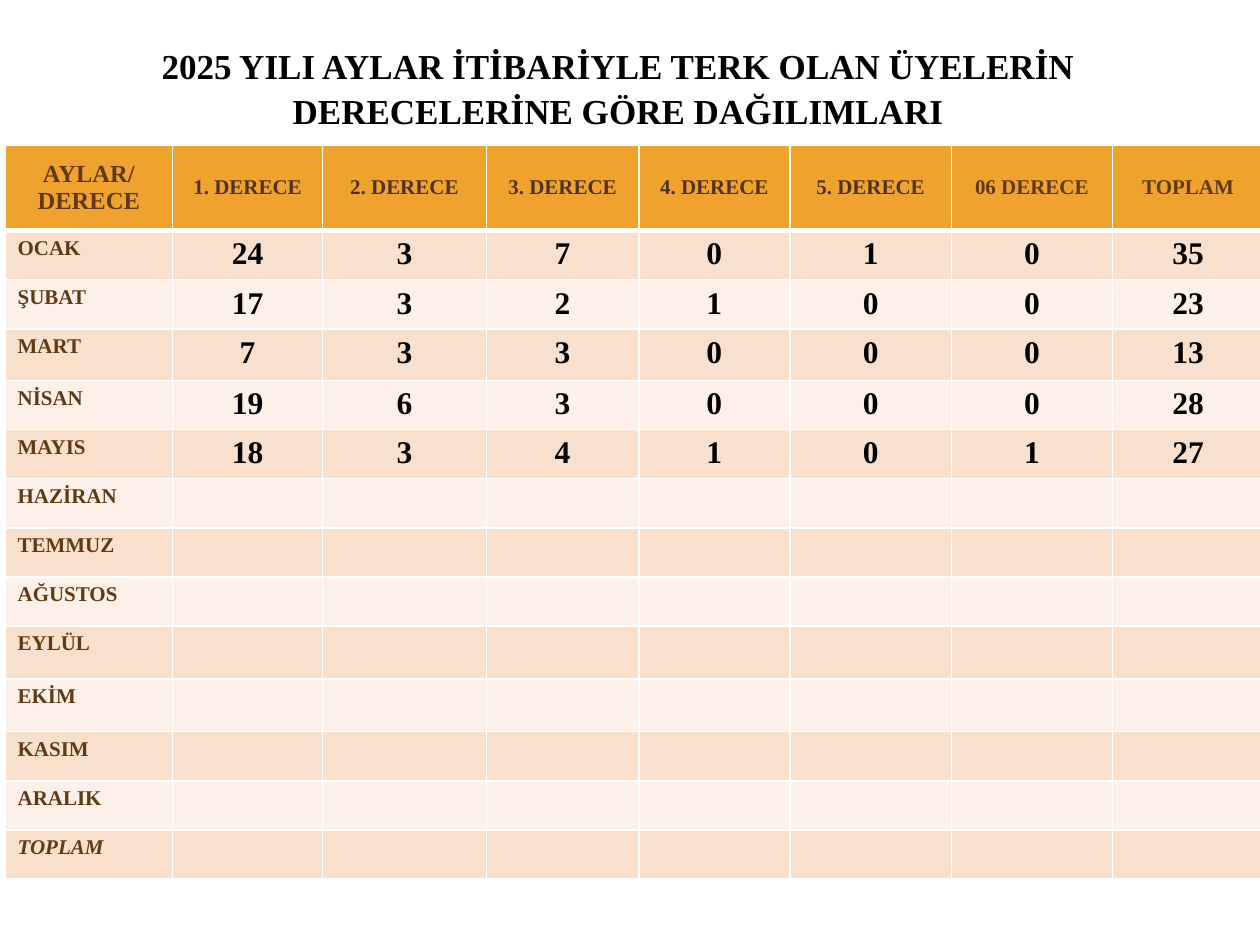
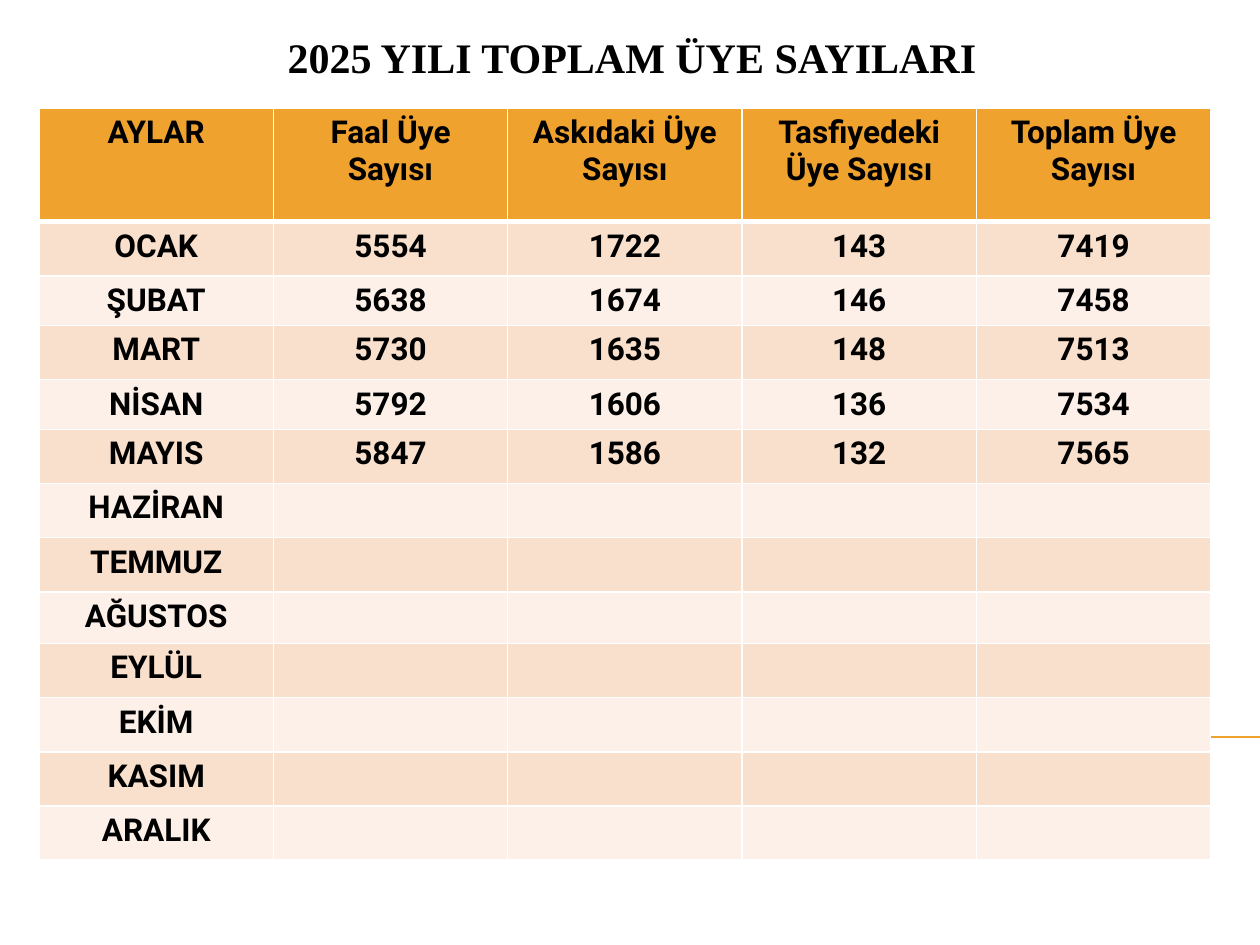
"""Build two slides of 2025 membership tables by month."""
from lxml.etree import SubElement
from pptx import Presentation
from pptx.dml.color import RGBColor
from pptx.enum.shapes import MSO_CONNECTOR
from pptx.enum.text import MSO_ANCHOR as ANCHOR, MSO_AUTO_SIZE, PP_ALIGN as ALIGN
from pptx.oxml.ns import qn
from pptx.util import Inches, Pt

ORANGE = RGBColor(0xF0, 0xA2, 0x2E)
PEACH = RGBColor(0xF9, 0xE0, 0xCD)
CREAM = RGBColor(0xFC, 0xF0, 0xE8)
BROWN = RGBColor(0x60, 0x3A, 0x14)
DARK_BROWN = RGBColor(0x52, 0x32, 0x27)
BLACK = RGBColor(0, 0, 0)
SERIF, SANS = "Times New Roman", "Roboto"

MONTHS = ["OCAK", "ŞUBAT", "MART", "NİSAN", "MAYIS", "HAZİRAN", "TEMMUZ",
          "AĞUSTOS", "EYLÜL", "EKİM", "KASIM", "ARALIK"]
LEAVERS = [[24, 3, 7, 0, 1, 0, 35], [17, 3, 2, 1, 0, 0, 23], [7, 3, 3, 0, 0, 0, 13],
           [19, 6, 3, 0, 0, 0, 28], [18, 3, 4, 1, 0, 1, 27]]
MEMBERS = [[5554, 1722, 143, 7419], [5638, 1674, 146, 7458], [5730, 1635, 148, 7513],
           [5792, 1606, 136, 7534], [5847, 1586, 132, 7565]]

PAGES = [
    {"title": "2025 YILI AYLAR İTİBARİYLE TERK OLAN ÜYELERİN DERECELERİNE GÖRE DAĞILIMLARI",
     "title_box": (0.28, 0.29, 9.25, 0.87), "title_size": 20,
     "title_anchor": ANCHOR.TOP, "title_spacing": 1.05,
     "headers": ["AYLAR/ DERECE", *[f"{degree}. DERECE" for degree in range(1, 6)],
                 "06 DERECE", "TOPLAM"],
     "labels": MONTHS + ["TOPLAM"], "counts": LEAVERS, "corner": (0.04, 1.15),
     "widths": [1.33, 1.19, 1.3, 1.21, 1.2, 1.28, 1.28, 1.2],
     "heights": [0.68, 0.39, 0.39, 0.41, *[0.39] * 5, 0.42, 0.42, *[0.39] * 3],
     "font": SERIF, "header_anchor": ANCHOR.MIDDLE, "header_size": 12,
     "header_color": DARK_BROWN, "label_size": 12, "label_color": BROWN,
     "label_align": ALIGN.LEFT},
    {"title": "2025 YILI TOPLAM ÜYE SAYILARI",
     "title_box": (0.39, 0.23, 9.25, 0.47), "title_size": 24,
     "title_anchor": ANCHOR.BOTTOM, "title_spacing": 1.0,
     "headers": ["AYLAR", "Faal Üye Sayısı", "Askıdaki Üye Sayısı",
                 "Tasfiyedeki Üye Sayısı", "Toplam Üye Sayısı"],
     "labels": MONTHS, "counts": MEMBERS, "corner": (0.31, 0.86),
     "widths": [1.86] * 5,
     "heights": [0.9, 0.43, 0.39, 0.43, 0.35, *[0.43] * 3, 0.41, *[0.43] * 4],
     "font": SANS, "header_anchor": ANCHOR.TOP, "header_size": 18,
     "header_color": BLACK, "label_size": 18, "label_color": BLACK,
     "label_align": ALIGN.CENTER},
]


def write(paragraph, text, align, **font):
    paragraph.alignment = align
    if text == "":
        SubElement(paragraph._p, qn("a:endParaRPr"), sz=str(int(font["size"].pt * 100)))
        return
    run = paragraph.add_run()
    run.text = text
    run.font.color.rgb = font.pop("color")
    for attribute, value in font.items():
        setattr(run.font, attribute, value)


def finish_cell(cell, fill, bottom):
    for side, points in {"lnL": 1, "lnR": 1, "lnT": 1, "lnB": bottom}.items():
        edge = SubElement(cell._tc.get_or_add_tcPr(), qn(f"a:{side}"), w=str(Pt(points)))
        SubElement(SubElement(edge, qn("a:solidFill")), qn("a:srgbClr"), val="FFFFFF")
    cell.fill.solid()
    cell.fill.fore_color.rgb = fill


deck = Presentation()
deck.slide_width, deck.slide_height = Inches(10), Inches(7.5)

for page in PAGES:
    slide = deck.slides.add_slide(deck.slide_layouts[5])
    rule = slide.shapes.add_connector(MSO_CONNECTOR.STRAIGHT, Inches(0.56), Inches(5.85),
                                      Inches(10), Inches(5.85))
    rule.line.color.rgb = ORANGE
    rule.line.width = Pt(0.75)
    SubElement(rule._element.spPr, qn("a:effectLst"))

    title = slide.shapes.title
    for side, length in zip(("left", "top", "width", "height"), page["title_box"]):
        setattr(title, side, Inches(length))
    frame = title.text_frame
    frame.word_wrap = True
    frame.auto_size = MSO_AUTO_SIZE.NONE
    frame.vertical_anchor = page["title_anchor"]
    heading = frame.paragraphs[0]
    heading.line_spacing = page["title_spacing"]
    write(heading, page["title"], ALIGN.CENTER, size=Pt(page["title_size"]),
          name=SERIF, bold=True, color=BLACK)

    widths, heights = page["widths"], page["heights"]
    left, top = page["corner"]
    table = slide.shapes.add_table(len(heights), len(widths), Inches(left), Inches(top),
                                   Inches(sum(widths)), Inches(sum(heights))).table
    for column, width in zip(table.columns, widths):
        column.width = Inches(width)
    for row, height in zip(table.rows, heights):
        row.height = Inches(height)

    for index, header in enumerate(page["headers"]):
        cell = table.cell(0, index)
        cell.vertical_anchor = page["header_anchor"]
        size, color = page["header_size"], page["header_color"]
        if header == "AYLAR/ DERECE":
            size = 14
        if header in ("AYLAR/ DERECE", "06 DERECE", "TOPLAM"):
            color = BROWN
        write(cell.text_frame.paragraphs[0], header, ALIGN.CENTER, size=Pt(size),
              name=page["font"], bold=True, color=color)
        finish_cell(cell, ORANGE, 3)

    for line, label in enumerate(page["labels"], start=1):
        band = PEACH if line % 2 else CREAM
        counts = page["counts"][line - 1] if line <= len(page["counts"]) else []
        month = table.cell(line, 0)
        write(month.text_frame.paragraphs[0], label, page["label_align"],
              size=Pt(page["label_size"]), name=page["font"], bold=True,
              italic=label == "TOPLAM", color=page["label_color"])
        finish_cell(month, band, 1)
        for index in range(1, len(widths)):
            cell = table.cell(line, index)
            count = str(counts[index - 1]) if counts else ""
            write(cell.text_frame.paragraphs[0], count, ALIGN.CENTER,
                  size=Pt(18 if count else 12), name=page["font"], bold=True, color=BLACK)
            finish_cell(cell, band, 1)

deck.save("out.pptx")
